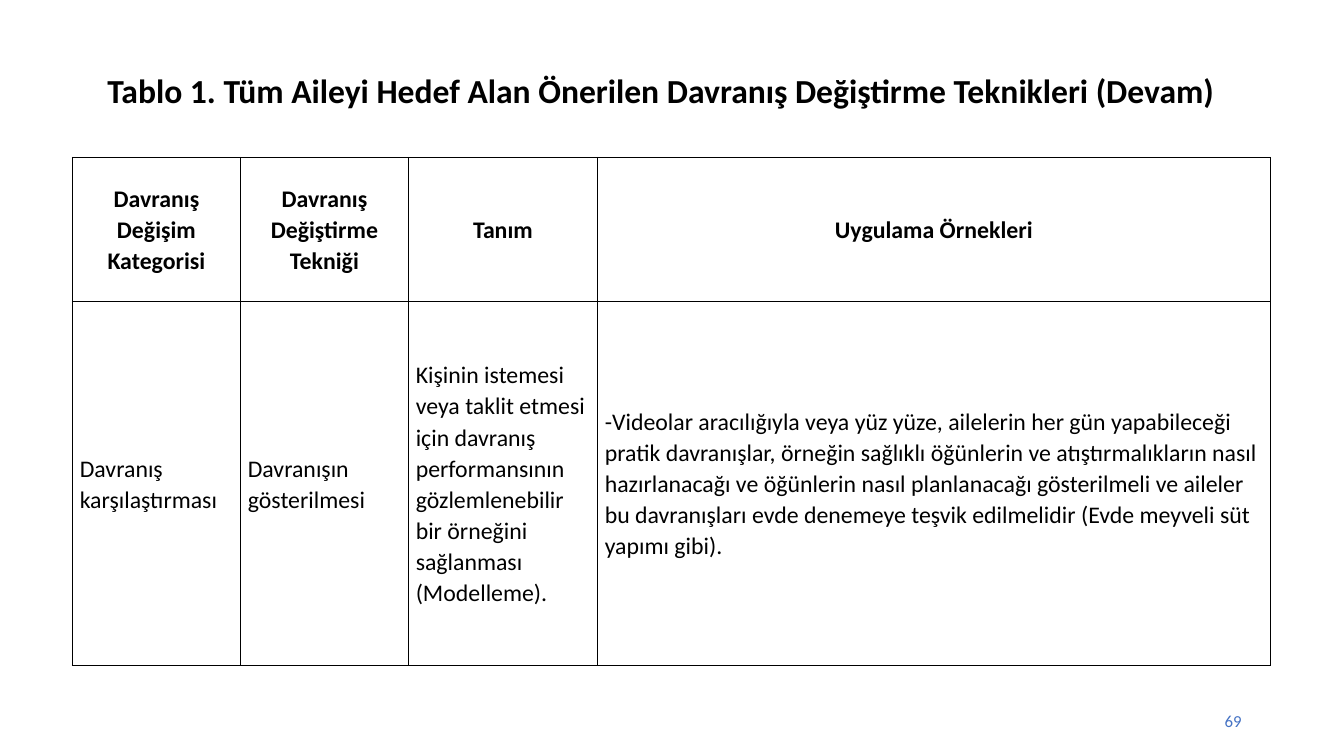
from dataclasses import dataclass

from lxml.etree import SubElement
from pptx import Presentation
from pptx.dml.color import RGBColor
from pptx.enum.text import MSO_ANCHOR, PP_ALIGN
from pptx.oxml.ns import qn
from pptx.util import Pt

TITLE = "Tablo 1. Tüm Aileyi Hedef Alan Önerilen Davranış Değiştirme Teknikleri (Devam)"
PAGE_NUMBER = "69"
HEADER = [
    "Davranış Değişim Kategorisi",
    "Davranış Değiştirme Tekniği",
    "Tanım",
    "Uygulama Örnekleri",
]
TECHNIQUE = [
    "Davranış karşılaştırması",
    "Davranışın gösterilmesi",
    "Kişinin istemesi veya taklit etmesi için davranış performansının "
    "gözlemlenebilir bir örneğini sağlanması (Modelleme).",
    "-Videolar aracılığıyla veya yüz yüze, ailelerin her gün yapabileceği "
    "pratik davranışlar, örneğin sağlıklı öğünlerin ve atıştırmalıkların nasıl "
    "hazırlanacağı ve öğünlerin nasıl planlanacağı gösterilmeli ve aileler "
    "bu davranışları evde denemeye teşvik edilmelidir (Evde meyveli süt yapımı gibi).",
]

SLIDE_SIZE = (1280, 720)
TITLE_BOX = (59, 46, 1141, 84)
TABLE_ORIGIN = (69, 150)
COLUMN_WIDTHS = [160, 160, 180, 641]
ROW_HEIGHTS = [137, 347]
NUMBER_BOX = (904, 667, 288, 38)
CELL_INSET = 7


@dataclass(frozen=True)
class Theme:
    font: str = "Calibri"
    ink: str = "000000"
    paper: str = "FFFFFF"
    accent: str = "4472C4"
    title_size: int = 24
    table_size: int = 17
    number_size: int = 12
    border: int = 1


THEME = Theme()
HEADER_PARAGRAPH = {"alignment": PP_ALIGN.CENTER, "line_spacing": 1.07}
BODY_PARAGRAPH = {"alignment": PP_ALIGN.LEFT, "line_spacing": 1.07, "space_after": Pt(8)}


def px(length):
    return length * 9525


def apply(target, values):
    for name, value in values.items():
        setattr(target, name, value)


def place(shape, box):
    apply(shape, dict(zip(("left", "top", "width", "height"), map(px, box))))


def write(text_frame, text, size, color, bold, paragraph_format):
    text_frame.text = text
    text_frame.word_wrap = True
    text_frame.vertical_anchor = MSO_ANCHOR.MIDDLE
    paragraph = text_frame.paragraphs[0]
    apply(paragraph, paragraph_format)
    font = paragraph.runs[0].font
    apply(font, {"name": THEME.font, "size": Pt(size), "bold": bold})
    font.color.rgb = RGBColor.from_string(color)


def draw_borders(cell):
    properties = cell._tc.get_or_add_tcPr()
    for index, side in enumerate(("a:lnL", "a:lnR", "a:lnT", "a:lnB")):
        line = SubElement(properties, qn(side), w=str(Pt(THEME.border)))
        fill = SubElement(line, qn("a:solidFill"))
        SubElement(fill, qn("a:srgbClr"), val=THEME.ink)
        properties.insert(index, line)


def add_title(slide):
    title = slide.shapes.title
    place(title, TITLE_BOX)
    write(title.text_frame, TITLE, THEME.title_size, THEME.ink, True,
          {"alignment": PP_ALIGN.CENTER, "line_spacing": 0.9})


def add_technique_table(slide):
    box = (*TABLE_ORIGIN, sum(COLUMN_WIDTHS), sum(ROW_HEIGHTS))
    table = slide.shapes.add_table(
        len(ROW_HEIGHTS), len(COLUMN_WIDTHS), *map(px, box)).table
    apply(table, {"first_row": False, "horz_banding": False})
    for column, width in zip(table.columns, COLUMN_WIDTHS):
        column.width = px(width)
    for row, height in zip(table.rows, ROW_HEIGHTS):
        row.height = px(height)
    contents = [(HEADER, True, HEADER_PARAGRAPH), (TECHNIQUE, False, BODY_PARAGRAPH)]
    for row, (texts, bold, paragraph_format) in zip(table.rows, contents):
        for cell, text in zip(row.cells, texts):
            write(cell.text_frame, text, THEME.table_size, THEME.ink, bold, paragraph_format)
            apply(cell, {
                "margin_left": px(CELL_INSET), "margin_right": px(CELL_INSET),
                "margin_top": 0, "margin_bottom": 0,
                "vertical_anchor": MSO_ANCHOR.MIDDLE,
            })
            cell.fill.solid()
            cell.fill.fore_color.rgb = RGBColor.from_string(THEME.paper)
            draw_borders(cell)


def add_page_number(slide):
    number = slide.shapes.add_textbox(*map(px, NUMBER_BOX))
    write(number.text_frame, PAGE_NUMBER, THEME.number_size, THEME.accent, False,
          {"alignment": PP_ALIGN.RIGHT})


def main():
    presentation = Presentation()
    apply(presentation, dict(zip(("slide_width", "slide_height"), map(px, SLIDE_SIZE))))
    slide = presentation.slides.add_slide(presentation.slide_layouts.get_by_name("Title Only"))
    add_title(slide)
    add_technique_table(slide)
    add_page_number(slide)
    presentation.save("out.pptx")


if __name__ == "__main__":
    main()
